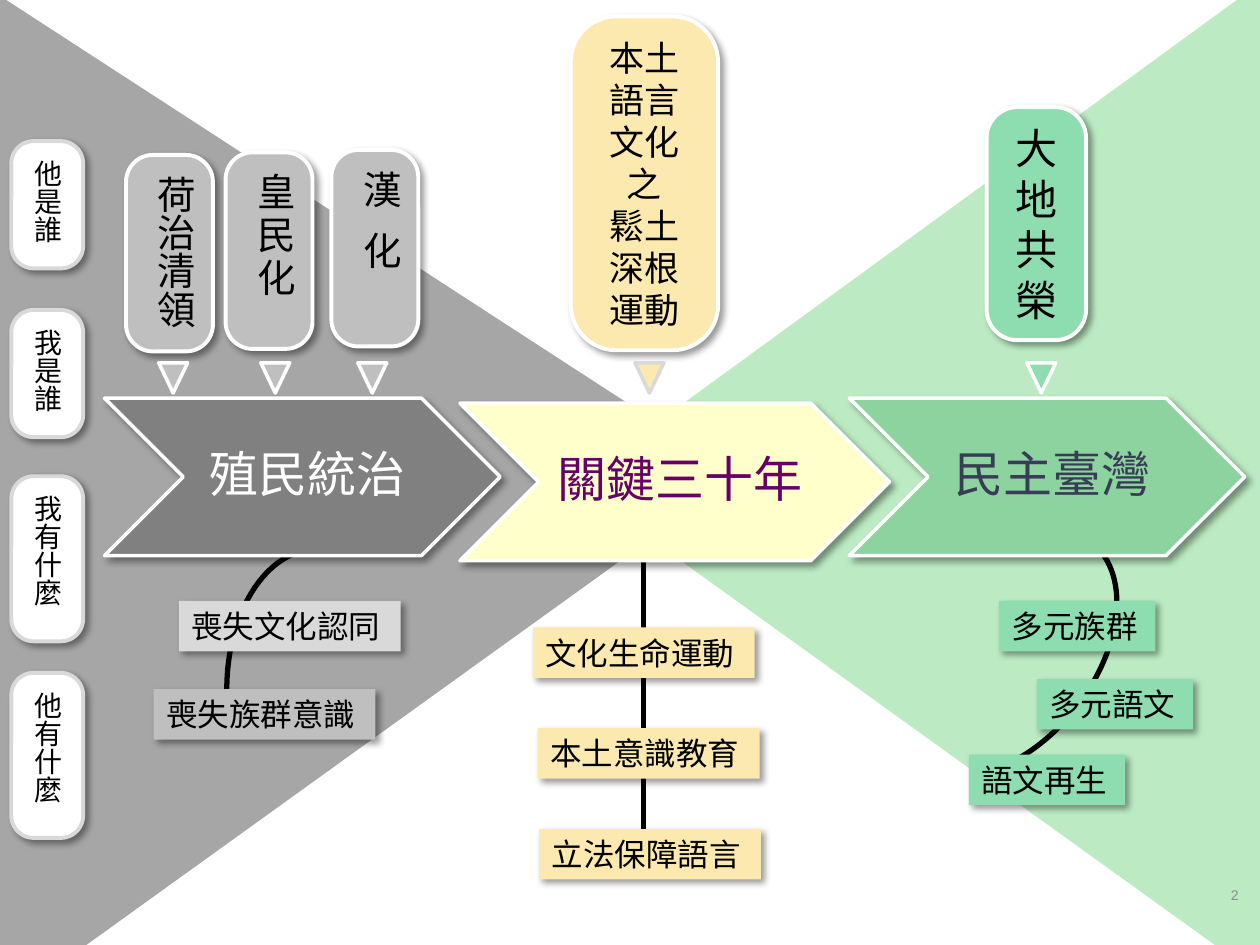
from dataclasses import dataclass
from lxml.etree import SubElement
from pptx import Presentation
from pptx.dml.color import RGBColor
from pptx.enum.shapes import MSO_CONNECTOR as Link, MSO_SHAPE as Kind
from pptx.enum.text import MSO_ANCHOR as Anchor, MSO_AUTO_SIZE as Fit, PP_ALIGN as Align
from pptx.oxml.ns import qn
from pptx.util import Inches, Pt

BLACK = RGBColor(0x00, 0x00, 0x00)
WHITE = RGBColor(0xFF, 0xFF, 0xFF)
PALE = RGBColor(0xD9, 0xD9, 0xD9)
SILVER = RGBColor(0xBF, 0xBF, 0xBF)
GREY = RGBColor(0xA6, 0xA6, 0xA6)
DARK = RGBColor(0x80, 0x80, 0x80)
FAINT = RGBColor(0x8C, 0x8C, 0x8C)
SAND = RGBColor(0xFC, 0xE9, 0xAF)
CREAM = RGBColor(0xFF, 0xFF, 0xCC)
MINT = RGBColor(0xBC, 0xEB, 0xC3)
JADE = RGBColor(0x8D, 0xDD, 0xB1)
GREEN = RGBColor(0x8D, 0xD3, 0xA0)
PLUM = RGBColor(0x66, 0x00, 0x66)
NAVY = RGBColor(0x37, 0x3D, 0x54)
SANS_JP = "Noto Sans CJK JP"
SANS_SC = "Noto Sans CJK SC"


@dataclass
class Panel:
    kind: Kind
    box: tuple[float, float, float, float]
    fill: RGBColor
    flip: str = ""


@dataclass
class Label:
    text: str
    left: float
    top: float
    width: float
    fill: RGBColor


@dataclass
class Pill:
    text: str
    box: tuple[float, float, float, float]
    fill: RGBColor
    edge: RGBColor
    size: int
    font: str = SANS_JP
    tall: bool = True
    anchor: Anchor = Anchor.MIDDLE
    gap: float = 0


@dataclass
class Arrow:
    text: str
    left: float
    top: float
    width: float
    fill: RGBColor
    ink: RGBColor


@dataclass
class Mark:
    left: float
    fill: RGBColor
    edge: RGBColor = WHITE


PANELS = [
    Panel(Kind.RECTANGLE, (3.52, 3.24, 6.63, 0.97), MINT, "H"),
    Panel(Kind.RIGHT_TRIANGLE, (4.68, 3.93, 5.74, 4.13), MINT, "HV"),
    Panel(Kind.RIGHT_TRIANGLE, (4.7, -0.17, 5.35, 3.9), MINT, "H"),
    Panel(Kind.RECTANGLE, (-1.69, 3.4, 6.63, 0.97), GREY),
    Panel(Kind.RIGHT_TRIANGLE, (-0.3, 4.08, 5.74, 4.13), GREY, "V"),
    Panel(Kind.RIGHT_TRIANGLE, (-0.12, -0.11, 6.01, 3.9), GREY),
]
LABELS = [
    Label("喪失文化認同", 1.42, 4.77, 1.76, PALE),
    Label("喪失族群意識", 1.22, 5.47, 1.76, SILVER),
    Label("文化生命運動", 4.23, 4.98, 1.76, SAND),
    Label("本土意識教育", 4.27, 5.78, 1.76, SAND),
    Label("立法保障語言", 4.28, 6.58, 1.76, SAND),
    Label("多元語文", 8.23, 5.39, 1.24, JADE),
    Label("多元族群", 7.93, 4.77, 1.24, JADE),
    Label("語文再生", 7.69, 5.99, 1.24, JADE),
]
PILLS = [
    Pill("荷治清領", (1, 1.23, 0.69, 1.56), SILVER, WHITE, 22, anchor=Anchor.TOP),
    Pill("皇 民 化", (1.79, 1.21, 0.69, 1.56), SILVER, WHITE, 22, anchor=Anchor.TOP, gap=-1.5),
    Pill("漢 化", (2.63, 1.19, 0.69, 1.56), SILVER, WHITE, 22, anchor=Anchor.TOP, gap=4),
    Pill("本土語言文化之\v鬆土深根\n運動", (4.53, 0.13, 1.17, 2.65), SAND, WHITE, 20, SANS_SC, False),
    Pill("大地共榮", (7.83, 0.85, 0.79, 1.85), JADE, WHITE, 24, SANS_SC, False),
    Pill("他是誰", (0.09, 1.12, 0.57, 1.01), WHITE, PALE, 16),
    Pill("我是誰", (0.09, 2.46, 0.57, 1.01), WHITE, PALE, 16),
    Pill("我有什麼", (0.09, 3.78, 0.57, 1.31), WHITE, PALE, 16),
    Pill("他有什麼", (0.09, 5.34, 0.57, 1.31), WHITE, PALE, 16),
]
MARKS = [
    Mark(1.26, SILVER),
    Mark(2.07, SILVER),
    Mark(2.84, SILVER),
    Mark(5.04, SAND, PALE),
    Mark(8.15, JADE),
]
ARROWS = [
    Arrow("殖民統治", 0.83, 3.16, 3.14, DARK, WHITE),
    Arrow("關鍵三十年", 3.65, 3.2, 3.41, CREAM, PLUM),
    Arrow("民主臺灣", 6.74, 3.16, 3.14, GREEN, NAVY),
]


def paint(shape, fill: RGBColor | None, edge: RGBColor | None = None, width: float = 2) -> None:
    shape.shadow.inherit = False
    if fill is None:
        shape.fill.background()
    else:
        shape.fill.solid()
        shape.fill.fore_color.rgb = fill
    if edge is None:
        shape.line.fill.background()
    else:
        shape.line.color.rgb = edge
        shape.line.width = Pt(width)


def shade(shape) -> None:
    glow = shape._element.spPr.find(qn("a:effectLst"))
    drop = SubElement(glow, qn("a:outerShdw"), blurRad=str(Pt(4)), dist=str(Pt(3)),
                      dir="2700000", algn="tl", rotWithShape="0")
    tint = SubElement(drop, qn("a:srgbClr"), val=str(BLACK))
    SubElement(tint, qn("a:alpha"), val="40000")


def flip(shape, axes: str) -> None:
    for axis in axes:
        shape._element.spPr.xfrm.set(f"flip{axis}", "1")


def write(shape, text: str, size: float, font: str, ink: RGBColor, align: Align,
          anchor: Anchor = Anchor.MIDDLE, wrap: bool = True, gap: float = 0) -> None:
    frame = shape.text_frame
    frame.text = text
    frame.word_wrap = wrap
    frame.vertical_anchor = anchor
    for para in frame.paragraphs:
        para.alignment = align
        for run in para.runs:
            run.font.size = Pt(size)
            run.font.name = font
            run.font.color.rgb = ink
            props = run._r.get_or_add_rPr()
            SubElement(props, qn("a:ea"), typeface=font)
            if gap:
                props.set("spc", str(int(gap * 100)))


def place(shapes, kind: Kind, box: tuple[float, float, float, float]):
    return shapes.add_shape(kind, *map(Inches, box))


def add_panel(shapes, item: Panel) -> None:
    shape = place(shapes, item.kind, item.box)
    paint(shape, item.fill)
    flip(shape, item.flip)


def add_label(shapes, item: Label) -> None:
    shape = place(shapes, Kind.RECTANGLE, (item.left, item.top, item.width, 0.4))
    paint(shape, item.fill)
    shade(shape)
    write(shape, item.text, 18, SANS_JP, BLACK, Align.LEFT, Anchor.TOP, False)
    shape.text_frame.auto_size = Fit.SHAPE_TO_FIT_TEXT


def add_pill(shapes, item: Pill) -> None:
    shape = place(shapes, Kind.ROUNDED_RECTANGLE, item.box)
    shape.adjustments[0] = 0.31
    paint(shape, item.fill, item.edge, 2.25)
    shade(shape)
    write(shape, item.text, item.size, item.font, BLACK, Align.CENTER, item.anchor, gap=item.gap)
    shape.text_frame.auto_size = Fit.SHAPE_TO_FIT_TEXT
    if item.tall:
        shape.text_frame._txBody.bodyPr.set("vert", "eaVert")


def add_mark(shapes, item: Mark) -> None:
    shape = place(shapes, Kind.ISOSCELES_TRIANGLE, (item.left, 2.88, 0.23, 0.24))
    paint(shape, item.fill, item.edge)
    flip(shape, "V")


def add_arrow(shapes, item: Arrow, high: float = 1.25) -> None:
    left, top, half = item.left, item.top, high / 2
    tip, base = left + item.width, top + high
    pen = shapes.build_freeform(Inches(left), Inches(top))
    spots = [(tip - half, top), (tip, top + half), (tip - half, base),
             (left, base), (left + half, top + half)]
    pen.add_line_segments([(Inches(x), Inches(y)) for x, y in spots], close=True)
    shape = pen.convert_to_shape()
    paint(shape, item.fill, WHITE)
    shade(shape)
    write(shape, item.text, 28, SANS_SC, item.ink, Align.CENTER)
    frame = shape.text_frame
    frame.margin_left, frame.margin_right = Inches(0.75), Inches(0.67)
    frame.margin_top = frame.margin_bottom = Inches(0.04)
    frame.paragraphs[0].line_spacing = 0.9


def add_arc(shapes, left: float, top: float):
    shape = place(shapes, Kind.ARC, (left, top, 1.42, 2.22))
    paint(shape, None, BLACK, 3)
    return shape


def main() -> None:
    deck = Presentation()
    deck.slide_width, deck.slide_height = Inches(10), Inches(7.5)
    shapes = deck.slides.add_slide(deck.slide_layouts[6]).shapes

    stem = shapes.add_connector(Link.STRAIGHT, Inches(5.11), Inches(4.36), Inches(5.11), Inches(6.91))
    stem.line.color.rgb = BLACK
    stem.line.width = Pt(3)
    SubElement(stem._element.spPr, qn("a:effectLst"))
    for item in PANELS:
        add_panel(shapes, item)
    flip(add_arc(shapes, 1.8, 4.36), "H")
    bend = add_arc(shapes, 7.27, 4.07)
    bend.rotation = 38.1
    bend.adjustments[0], bend.adjustments[1] = 162, 35.86
    for draw, items in ((add_label, LABELS), (add_pill, PILLS), (add_mark, MARKS), (add_arrow, ARROWS)):
        for item in items:
            draw(shapes, item)
    page = shapes.add_textbox(Inches(7.6), Inches(6.9), Inches(2.33), Inches(0.4))
    write(page, "2", 8, "Arial", FAINT, Align.RIGHT)
    deck.save("out.pptx")


if __name__ == "__main__":
    main()
